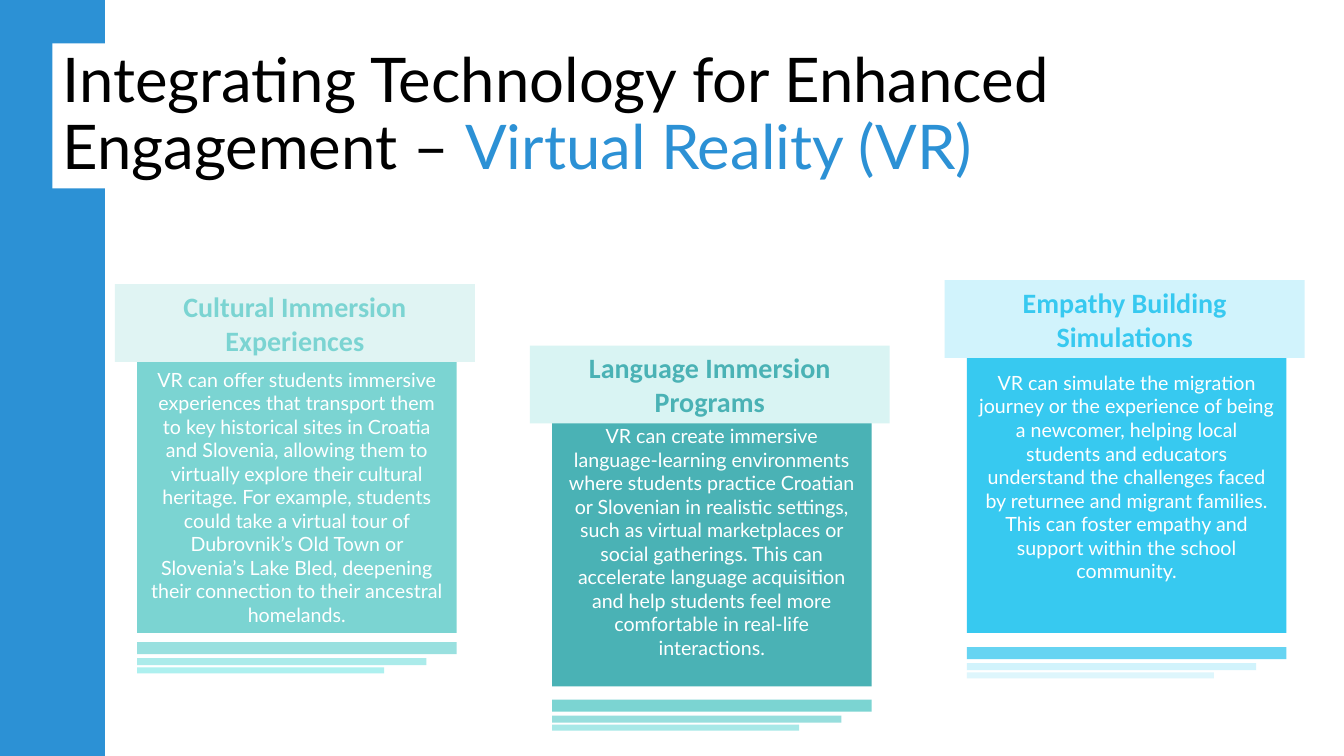
from pptx import Presentation
from pptx.dml.color import RGBColor
from pptx.enum.shapes import MSO_SHAPE
from pptx.enum.text import MSO_ANCHOR, PP_ALIGN
from pptx.util import Inches, Pt

RECTANGLE = MSO_SHAPE.RECTANGLE
MIDDLE = MSO_ANCHOR.MIDDLE
LEFT, CENTER = PP_ALIGN.LEFT, PP_ALIGN.CENTER

WHITE = RGBColor(0xFF, 0xFF, 0xFF)
BLACK = RGBColor(0x00, 0x00, 0x00)
BLUE = RGBColor(0x2C, 0x91, 0xD5)
AQUA = RGBColor(0x7B, 0xD4, 0xD2)
TEAL = RGBColor(0x4A, 0xB2, 0xB5)
SKY = RGBColor(0x37, 0xC9, 0xF0)
PALE_AQUA = RGBColor(0xE0, 0xF4, 0xF3)
PALE_TEAL = RGBColor(0xD9, 0xF4, 0xF3)
PALE_SKY = RGBColor(0xD1, 0xF3, 0xFC)
AQUA_BARS = (RGBColor(0x99, 0xE0, 0xDF), RGBColor(0xAB, 0xEB, 0xEA), RGBColor(0xAD, 0xF0, 0xEF))
TEAL_BARS = (AQUA, RGBColor(0x97, 0xDE, 0xDD), RGBColor(0xA7, 0xE8, 0xE7))
SKY_BARS = (RGBColor(0x66, 0xD4, 0xF2), PALE_SKY, RGBColor(0xDE, 0xF6, 0xFC))

SLIDE_WIDTH, SLIDE_HEIGHT = 13.33, 7.5
FIRST_COLUMN, COLUMN_STEP = 1.14, 4.115
HEADER_WIDTH, HEADER_HEIGHT = 3.57, 0.77
BODY_INDENT, BODY_WIDTH = 0.22, 3.17
BARS = ((0, 3.17, 0.12), (0.16, 2.87, 0.07), (0.25, 2.45, 0.06))

CARDS = (
    ("Cultural Immersion Experiences",
     "VR can offer students immersive experiences that transport them to key historical sites "
     "in Croatia and Slovenia, allowing them to virtually explore their cultural heritage. "
     "For example, students could take a virtual tour of Dubrovnik’s Old Town or Slovenia’s "
     "Lake Bled, deepening their connection to their ancestral homelands.",
     2.82, 3.58, 2.7, 6.37, 0.05, AQUA, PALE_AQUA, AQUA_BARS),
    ("Language Immersion Programs",
     "VR can create immersive language-learning environments where students practice Croatian "
     "or Slovenian in realistic settings, such as virtual marketplaces or social gatherings. "
     "This can accelerate language acquisition and help students feel more comfortable in "
     "real-life interactions.",
     3.43, 3.94, 2.87, 6.94, 0.05, TEAL, PALE_TEAL, TEAL_BARS),
    ("Empathy Building Simulations",
     "VR can simulate the migration journey or the experience of being a newcomer, helping "
     "local students and educators understand the challenges faced by returnee and migrant "
     "families. This can foster empathy and support within the school community.",
     2.78, 3.41, 2.87, 6.42, 0.28, SKY, PALE_SKY, SKY_BARS),
)

deck = Presentation()
deck.slide_width, deck.slide_height = Inches(SLIDE_WIDTH), Inches(SLIDE_HEIGHT)
page = deck.slides.add_slide(deck.slide_layouts[6])


def add_block(left, top, width, height, color):
    block = page.shapes.add_shape(
        RECTANGLE, Inches(left), Inches(top), Inches(width), Inches(height))
    block.shadow.inherit = False
    block.fill.solid()
    block.fill.fore_color.rgb = color
    block.line.fill.background()
    return block


def write(box, pieces, font, size, align, bold=False):
    box.text_frame.word_wrap = True
    box.text_frame.vertical_anchor = MIDDLE
    para = box.text_frame.paragraphs[0]
    para.alignment = align
    for text, color in pieces:
        span = para.add_run()
        span.text = text
        span.font.name, span.font.size, span.font.bold = font, Pt(size), bold
        span.font.color.rgb = color
    return para


add_block(0, 0, 1.04, SLIDE_HEIGHT, BLUE)
title = add_block(0.52, 0.43, 11.51, 1.44, WHITE)
heading = write(title, (("Integrating Technology for Enhanced Engagement – ", BLACK),
                        ("Virtual Reality (VR)", BLUE)), "Lato", 44, LEFT)
heading.line_spacing = 0.9

for column, card in enumerate(CARDS):
    name, detail, header_top, body_top, body_height, bars_top, inset, color, pale, shades = card
    left = FIRST_COLUMN + column * COLUMN_STEP
    body_left = left + BODY_INDENT
    body = add_block(body_left, body_top, BODY_WIDTH, body_height, color)
    body.text_frame.margin_bottom = Inches(inset)
    write(body, ((detail, WHITE),), "Lato", 14, CENTER)
    header = add_block(left, header_top, HEADER_WIDTH, HEADER_HEIGHT, pale)
    write(header, ((name, color),), "Calibri", 20, CENTER, True)
    for (drop, width, height), shade in zip(BARS, shades):
        add_block(body_left, bars_top + drop, width, height, shade)

deck.save("out.pptx")
